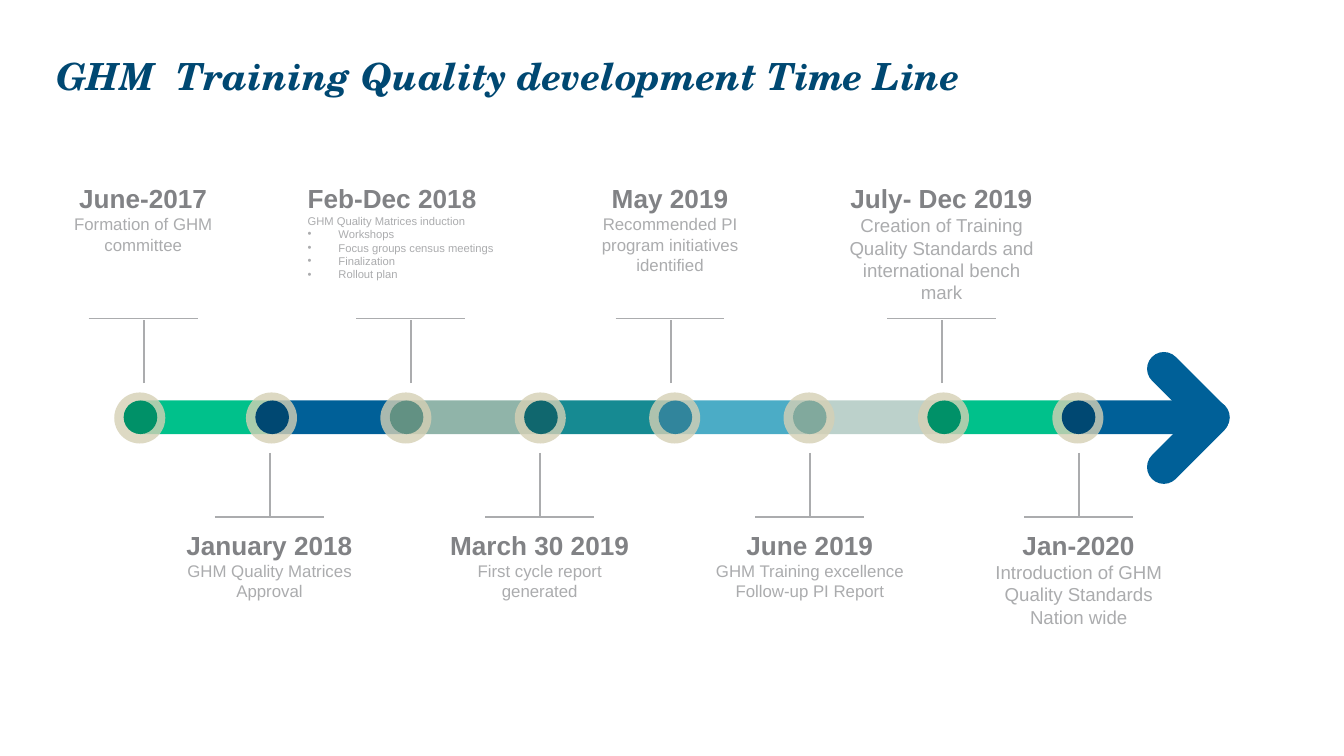
from lxml.etree import SubElement
from pptx import Presentation
from pptx.dml.color import RGBColor
from pptx.enum.shapes import MSO_CONNECTOR, MSO_SHAPE as SHAPE
from pptx.enum.text import MSO_ANCHOR as ANCHOR, PP_ALIGN as ALIGN
from pptx.oxml.ns import qn
from pptx.util import Inches, Pt

STAGE_OFFSETS = [0.02, *range(1, 8)]
BAR_COLORS = ["00C18B", "006098", "90B4A9", "168A92", "4BACC6", "BCD1CB", "00C18B", "006098"]
DOT_COLORS = ["009168", "004872", "629183", "10676E", "31859C", "81A99D", "009168", "004872"]
RING_COLOR = "D5D0B5"
HEADING = {"size": Pt(14), "bold": True, "name": "Arial"}
HEADING_COLOR = "818285"
DETAIL_COLOR = "ABACAE"

MILESTONES = [
    (1.07, "June-2017", 9, "Formation of GHM committee", []),
    (2.01, "January 2018", 9, "GHM Quality Matrices Approval", []),
    (3.06, "Feb-Dec 2018", 6, "GHM Quality Matrices induction",
     ["Workshops", "Focus groups census meetings", "Finalization", "Rollout plan"]),
    (4.02, "March 30 2019", 9, "First cycle report generated", []),
    (4.99, "May 2019", 9, "Recommended PI program initiatives identified", []),
    (6.03, "June 2019", 9, "GHM Training excellence Follow-up PI Report", []),
    (7.01, "July- Dec 2019", 10,
     "Creation of Training Quality Standards and international bench mark", []),
    (8.03, "Jan-2020", 10, "Introduction of GHM Quality Standards Nation wide", []),
]


def rgb(value):
    return RGBColor.from_string(value)


def format_font(font, values, color):
    for key, value in values.items():
        setattr(font, key, value)
    font.color.rgb = rgb(color)


def add_filled(slide, kind, left, top, width, height, color):
    filled = slide.shapes.add_shape(kind, *map(Inches, (left, top, width, height)))
    filled.shadow.inherit = False
    filled.fill.solid()
    filled.fill.fore_color.rgb = rgb(color)
    filled.line.fill.background()
    if kind == SHAPE.ROUNDED_RECTANGLE:
        filled.adjustments[0] = 0.5
    return filled


def add_rule(slide, *ends):
    rule = slide.shapes.add_connector(MSO_CONNECTOR.STRAIGHT, *map(Inches, ends))
    rule.line.color.rgb = rgb(DETAIL_COLOR)
    rule.line.width = Pt(1)
    SubElement(rule._element.spPr, qn("a:effectLst"))


def add_text_frame(slide, left, top, width, height):
    frame = slide.shapes.add_textbox(*map(Inches, (left, top, width, height))).text_frame
    frame.word_wrap = True
    return frame


def add_title(slide, left, top, width, height):
    frame = add_text_frame(slide, left, top, width, height)
    frame.margin_left = 0
    frame.vertical_anchor = ANCHOR.MIDDLE
    title = frame.paragraphs[0].add_run()
    title.text = "GHM  Training Quality development Time Line"
    style = {"size": Pt(20), "bold": True, "italic": True, "name": "TeX Gyre Schola"}
    format_font(title.font, style, "004872")


def add_stage(slide, left, top, bar_color, dot_color):
    add_filled(slide, SHAPE.ROUNDED_RECTANGLE, left, top, 1.25, 0.25, bar_color)
    ring = add_filled(slide, SHAPE.OVAL, left - 0.07, top - 0.06, 0.38, 0.38, RING_COLOR)
    ring_color = ring._element.spPr.find(qn("a:solidFill"))[0]
    SubElement(ring_color, qn("a:alpha"), val="80000")
    add_filled(slide, SHAPE.OVAL, left, top, 0.25, 0.25, dot_color)


def add_timeline(slide, left, top):
    for offset, *colors in zip(STAGE_OFFSETS, BAR_COLORS, DOT_COLORS):
        add_stage(slide, left + offset, top, *colors)
    for offset, angle in ((-0.18, 45), (0.19, 315)):
        barb = add_filled(slide, SHAPE.ROUNDED_RECTANGLE, left + 7.56, top + offset,
                          0.76, 0.25, BAR_COLORS[-1])
        barb.rotation = angle


def add_bullet(frame, text, style):
    item = frame.add_paragraph()
    properties = item._p.get_or_add_pPr()
    properties.set("marL", str(Inches(0.23)))
    properties.set("indent", str(-Inches(0.23)))
    SubElement(properties, qn("a:buFont"), typeface="Arial")
    SubElement(properties, qn("a:buChar"), char="•")
    run = item.add_run()
    run.text = text
    format_font(run.font, style, DETAIL_COLOR)


def add_milestone(slide, stem, above, heading, size, detail, bullets):
    text_top, near, far, cap = (1.31, 2.85, 2.38, 2.37) if above else (3.89, 3.37, 3.84, 3.85)
    reach, width, height = (0.87, 1.72, 0.94) if bullets else (0.85, 1.69, 0.64)
    frame = add_text_frame(slide, stem - reach, text_top, width, height)
    paragraph = frame.paragraphs[0]
    paragraph.alignment = ALIGN.LEFT if bullets else ALIGN.CENTER
    date = paragraph.add_run()
    date.text = heading
    format_font(date.font, HEADING, HEADING_COLOR)
    paragraph.add_line_break()
    summary = paragraph.add_run()
    summary.text = detail
    style = {"size": Pt(size), "bold": False, "name": "Arial"}
    format_font(summary.font, style, DETAIL_COLOR)
    for bullet in bullets:
        add_bullet(frame, bullet, style)
    add_rule(slide, stem, near, stem, far)
    add_rule(slide, stem - 0.41, cap, stem + 0.4, cap)


def main():
    deck = Presentation()
    deck.slide_width = Inches(10)
    deck.slide_height = deck.slide_width * 9 // 16
    slide = deck.slides.add_slide(deck.slide_layouts[6])
    add_title(slide, 0.42, 0.37, 9.15, 0.39)
    add_timeline(slide, 0.9, 2.98)
    for index, (stem, *content) in enumerate(MILESTONES):
        add_milestone(slide, stem, index % 2 == 0, *content)
    deck.save("out.pptx")


if __name__ == "__main__":
    main()
